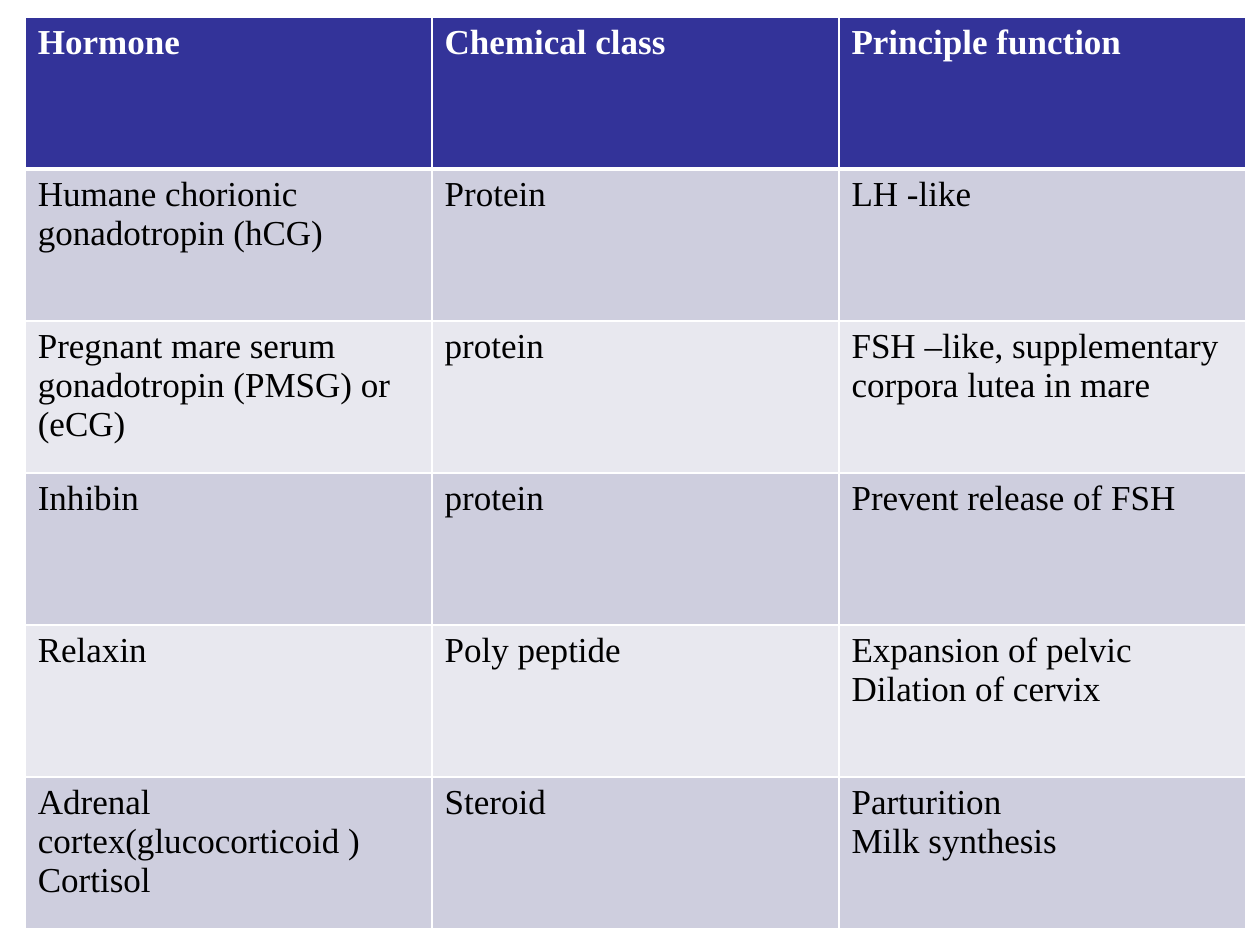
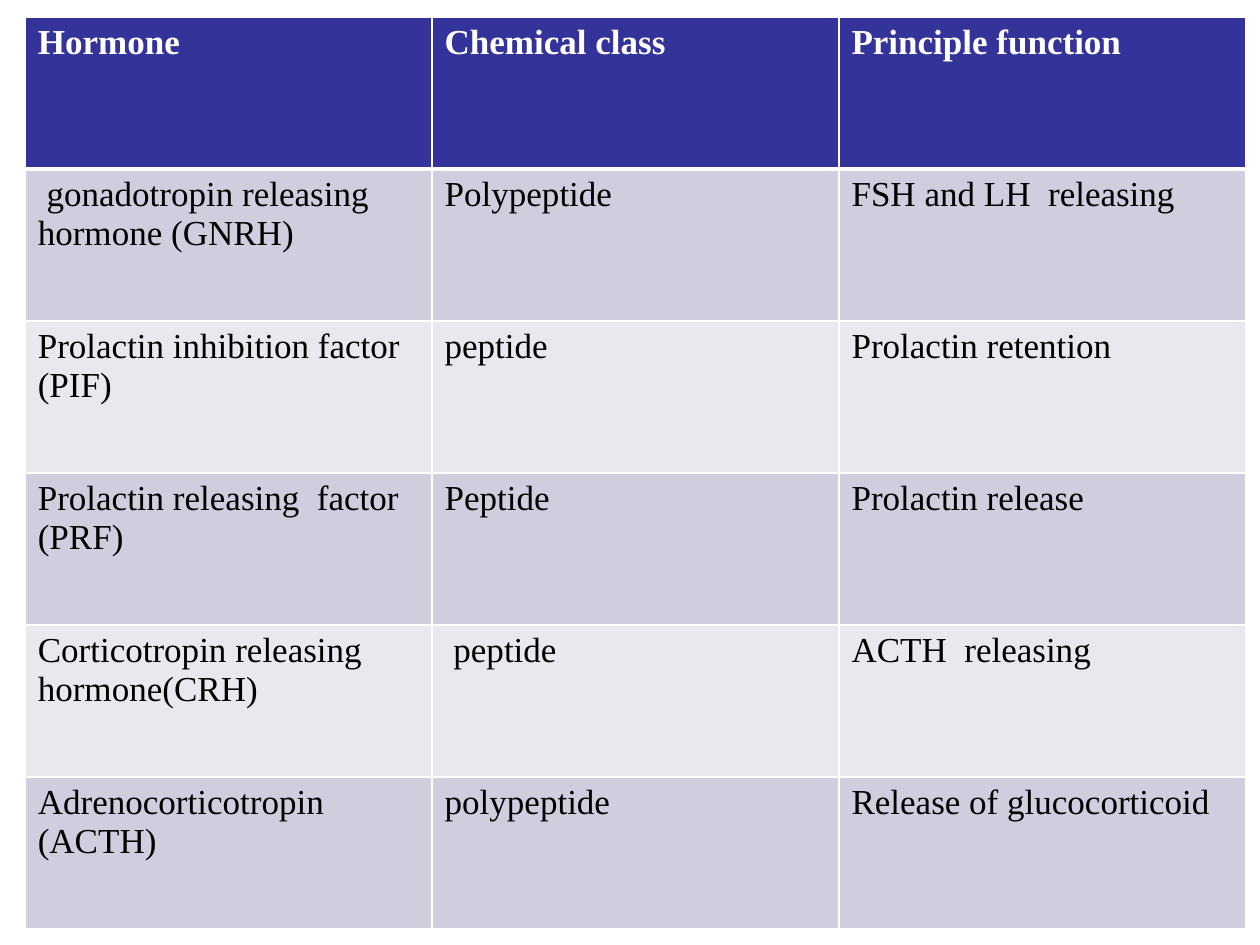
from lxml import etree
from pptx import Presentation, util as u
from pptx.dml import color
from pptx.oxml import ns

HEAD = ["Hormone", "Chemical class", "Principle function"]
PAGES = [
    [
        ["Humane chorionic gonadotropin (hCG)", "Protein", "LH -like"],
        ["Pregnant mare serum gonadotropin (PMSG) or (eCG)", "protein",
         "FSH –like, supplementary corpora lutea in mare"],
        ["Inhibin", "protein", "Prevent release of FSH"],
        ["Relaxin", "Poly peptide", "Expansion of pelvic\nDilation of cervix"],
        ["Adrenal cortex(glucocorticoid )\nCortisol", "Steroid",
         "Parturition\nMilk synthesis"],
    ],
    [
        [" gonadotropin releasing hormone (GNRH)", "Polypeptide",
         "FSH and LH  releasing"],
        ["Prolactin inhibition factor\n(PIF)", "peptide", "Prolactin retention"],
        ["Prolactin releasing  factor (PRF)", "Peptide", "Prolactin release"],
        ["Corticotropin releasing hormone(CRH)", " peptide", "ACTH  releasing"],
        ["Adrenocorticotropin (ACTH)", "polypeptide", "Release of glucocorticoid"],
    ],
]


def tint(code):
    return color.RGBColor.from_string(code)


class Deck:
    font, size = "Times New Roman", 20
    navy, white, black = "333399", "FFFFFF", "000000"
    bands = ["E8E8EF", "CECEDE"]
    left, top, wide, high = 14.4, 9.6, 232.5, 86.9

    def __init__(self):
        self.prs = Presentation()
        self.prs.slide_width, self.prs.slide_height = u.Pt(720), u.Pt(540)

    def page(self):
        self.slide = self.prs.slides.add_slide(self.prs.slide_layouts[6])

    def edge(self, cell, side, width):
        props = cell._tc.get_or_add_tcPr()
        line = etree.SubElement(props, ns.qn("a:ln" + side), w=str(u.Pt(width)))
        fill = etree.SubElement(line, ns.qn("a:solidFill"))
        etree.SubElement(fill, ns.qn("a:srgbClr"), val=self.white)

    def cell(self, cell, words, row):
        for side in "LRTB":
            thick = (row, side) in [(0, "B"), (1, "T")]
            self.edge(cell, side, 3 if thick else 1)
        cell.fill.solid()
        cell.fill.fore_color.rgb = tint(self.bands[row % 2] if row else self.navy)
        cell.text_frame.text = words
        for para in cell.text_frame.paragraphs:
            for run in para.runs:
                font = run.font
                font.name, font.size = self.font, u.Pt(self.size)
                font.bold = row == 0
                font.color.rgb = tint(self.black if row else self.white)

    def table(self, rows):
        count, cols = len(rows), len(rows[0])
        grid = self.slide.shapes.add_table(
            count, cols, u.Pt(self.left), u.Pt(self.top),
            u.Pt(self.wide * cols), u.Pt(self.high * count)).table
        for col in grid.columns:
            col.width = u.Pt(self.wide)
        for r, row in enumerate(rows):
            grid.rows[r].height = u.Pt(self.high)
            for c, words in enumerate(row):
                self.cell(grid.cell(r, c), words, r)


def main():
    deck = Deck()
    for rows in PAGES:
        deck.page()
        deck.table([HEAD] + rows)
    deck.prs.save("out.pptx")


if __name__ == "__main__":
    main()
